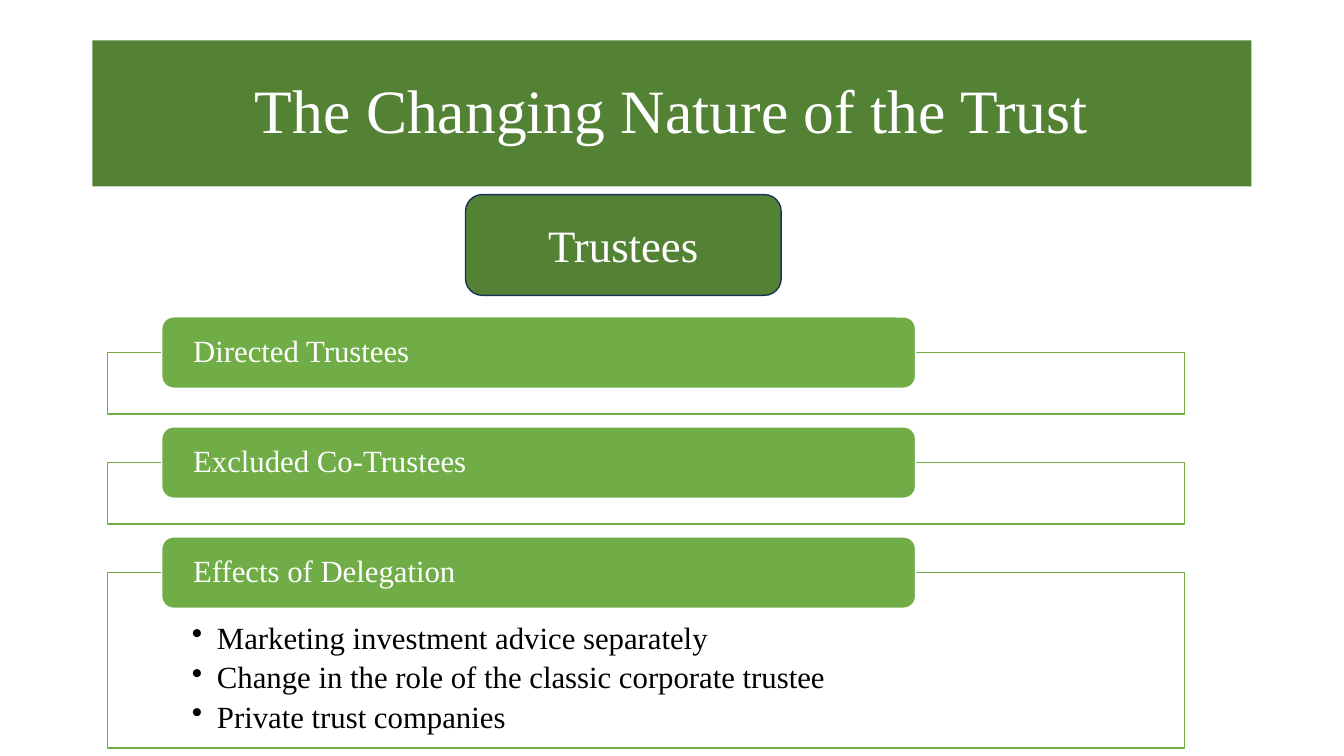
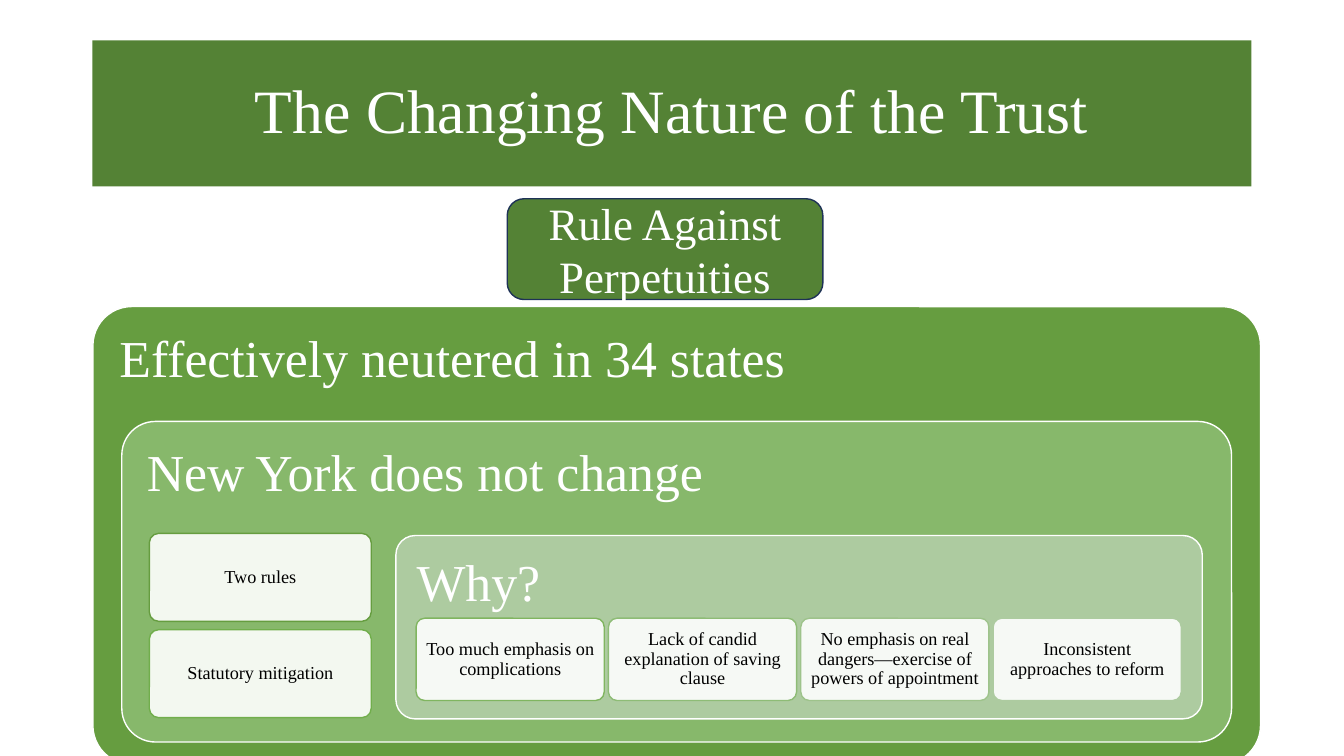
from pptx import Presentation
from pptx.dml.color import RGBColor
from pptx.enum.shapes import MSO_SHAPE as Shape
from pptx.enum.text import MSO_ANCHOR as Anchor, PP_ALIGN as Align
from pptx.oxml.ns import qn
from pptx.util import Pt
from lxml.etree import SubElement

FONT = "Times New Roman"
DARK_GREEN = RGBColor(0x54, 0x82, 0x35)
GREEN = RGBColor(0x70, 0xAD, 0x47)
NAVY = RGBColor(0x1E, 0x32, 0x56)
WHITE = RGBColor(0xFF, 0xFF, 0xFF)
BLACK = RGBColor(0, 0, 0)

# Nested panels, from the outermost inwards
PANEL_OUTER = RGBColor(0x66, 0x9D, 0x40)
PANEL_MIDDLE = RGBColor(0x87, 0xB8, 0x6B)
PANEL_INNER = RGBColor(0xAD, 0xCB, 0xA0)

# Card outlines
CARD_LINE = RGBColor(0x71, 0xAE, 0x4C)
REASON_LINES = [RGBColor(0x80, 0xB5, 0x60), RGBColor(0x8E, 0xBC, 0x76),
                RGBColor(0x9E, 0xC3, 0x8B), PANEL_INNER]

TITLE = "The Changing Nature of the Trust"


def add_box(slide, kind, left, top, width, height, fill,
            line=None, radius=None, opacity=None):
    shape = slide.shapes.add_shape(kind, Pt(left), Pt(top), Pt(width), Pt(height))
    shape.shadow.inherit = False
    shape.fill.solid()
    shape.fill.fore_color.rgb = fill
    if opacity is not None:
        color = shape.fill._xPr.find(qn("a:solidFill"))[0]
        SubElement(color, qn("a:alpha"), val=str(opacity * 1000))
    if line is None:
        shape.line.fill.background()
    else:
        shape.line.color.rgb = line
        shape.line.width = Pt(1)
    if radius is not None:
        shape.adjustments[0] = radius
    return shape


def write(shape, *lines, size, color=WHITE, align=Align.LEFT, anchor=Anchor.MIDDLE,
          insets=(7.2, 3.6, 7.2, 3.6), spacing=0.9, after=0, bullet=False):
    frame = shape.text_frame
    frame.word_wrap = True
    frame.vertical_anchor = anchor
    (frame.margin_left, frame.margin_top,
     frame.margin_right, frame.margin_bottom) = map(Pt, insets)
    for index, line in enumerate(lines):
        paragraph = frame.add_paragraph() if index else frame.paragraphs[0]
        paragraph.alignment = align
        paragraph.line_spacing = spacing
        paragraph.space_after = Pt(after)
        run = paragraph.add_run()
        run.text = line
        run.font.name = FONT
        run.font.size = Pt(size)
        run.font.color.rgb = color
        if bullet:
            properties = paragraph._p.get_or_add_pPr()
            properties.set("marL", str(Pt(18)))
            properties.set("indent", str(-Pt(18)))
            SubElement(properties, qn("a:buChar"), char="•")


def add_heading(slide, topic, left, top):
    """Title band and the topic badge below it."""
    band = add_box(slide, Shape.RECTANGLE, 66, 28.8, 828, 104.4, DARK_GREEN)
    write(band, TITLE, size=44, align=Align.CENTER)
    badge = add_box(slide, Shape.ROUNDED_RECTANGLE, left, top, 225.5, 72,
                    DARK_GREEN, NAVY)
    write(badge, topic, size=32, align=Align.CENTER, spacing=1)


def add_section(slide, top, label, height, points=()):
    """Outlined frame with a tab across its upper edge."""
    frame = add_box(slide, Shape.RECTANGLE, 77, top + 25.4, 769, height, WHITE, GREEN)
    if points:
        write(frame, *points, size=22, color=BLACK, anchor=Anchor.TOP,
              insets=(60, 36, 60, 12), after=4.3, bullet=True)
    tab = add_box(slide, Shape.ROUNDED_RECTANGLE, 115.5, top, 538.5, 51, GREEN, WHITE)
    write(tab, label, size=22, insets=(20, 0, 20, 0))


def add_panel(slide, left, top, width, height, label, fill, radius=0.105):
    panel = add_box(slide, Shape.ROUNDED_RECTANGLE, left, top, width, height,
                    fill, WHITE, radius)
    write(panel, label, size=37, anchor=Anchor.TOP, insets=[10.8] * 4)


def add_card(slide, left, top, width, height, label, line):
    card = add_box(slide, Shape.ROUNDED_RECTANGLE, left, top, width, height,
                   WHITE, line, radius=0.105, opacity=90)
    write(card, label, size=13, color=BLACK, align=Align.CENTER, insets=[3.6] * 4)


def build_trustees(slide):
    add_heading(slide, "Trustees", 332.5, 139)
    sections = [
        ("Directed Trustees", 44, ()),
        ("Excluded Co-Trustees", 44, ()),
        ("Effects of Delegation", 125.5,
         ("Marketing investment advice separately",
          "Change in the role of the classic corporate trustee",
          "Private trust companies")),
    ]
    for row, (label, height, points) in enumerate(sections):
        add_section(slide, 226.3 + row * 78.6, label, height, points)


def build_perpetuities(slide):
    add_heading(slide, "Rule Against Perpetuities", 362.3, 142)

    # Nested panels
    add_panel(slide, 66.4, 219, 834, 327, "Effectively neutered in 34 states",
              PANEL_OUTER, radius=0.085)
    add_panel(slide, 87, 301, 792.7, 229, "New York does not change", PANEL_MIDDLE)
    add_panel(slide, 282.8, 382.5, 576, 131, "Why?", PANEL_INNER)

    # Cards beside the inner panel
    rules = zip(["Two rules", "Statutory mitigation"], [PANEL_OUTER, CARD_LINE])
    for row, (label, line) in enumerate(rules):
        add_card(slide, 106.7, 381 + row * 68.8, 158.5, 62.8, label, line)

    # Reasons inside the inner panel
    reasons = ["Too much emphasis on complications",
               "Lack of candid explanation of saving clause",
               "No emphasis on real dangers—exercise of powers of appointment",
               "Inconsistent approaches to reform"]
    for column, (label, line) in enumerate(zip(reasons, REASON_LINES)):
        add_card(slide, 297.2 + column * 137.4, 441.6, 134.4, 58.8, label, line)


def main():
    presentation = Presentation()
    presentation.slide_width = Pt(960)
    presentation.slide_height = Pt(540)
    blank = presentation.slide_layouts[6]
    for build in (build_trustees, build_perpetuities):
        build(presentation.slides.add_slide(blank))
    presentation.save("out.pptx")


if __name__ == "__main__":
    main()
